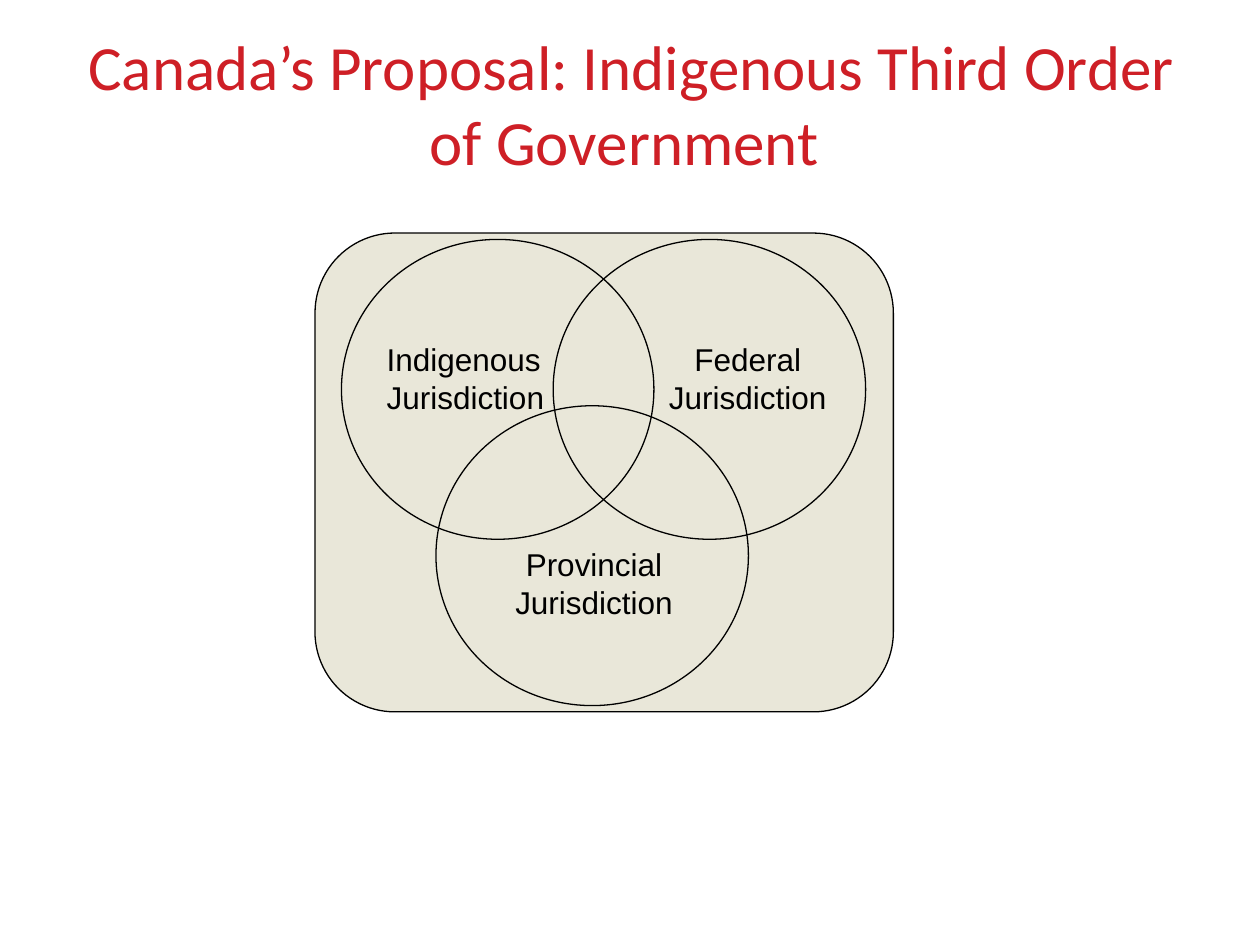
from lxml.etree import SubElement
from pptx import Presentation
from pptx.dml.color import RGBColor
from pptx.enum.shapes import MSO_SHAPE
from pptx.enum.text import MSO_ANCHOR, MSO_AUTO_SIZE, PP_ALIGN
from pptx.oxml.ns import qn
from pptx.util import Inches, Pt

RED = RGBColor(0xCE, 0x1F, 0x26)
TAN = RGBColor(0xC4, 0xBD, 0x97)
BLACK = RGBColor(0, 0, 0)

CIRCLE_WIDTH, CIRCLE_HEIGHT = 2.48, 2.38
LABEL_WIDTH, LABEL_HEIGHT = 1.53, 0.71

# Offsets from the panel's corner: circle (left, top), label (left, top)
JURISDICTIONS = [
    ("Indigenous Jurisdiction", (0.21, 0.05), (0.47, 0.8), PP_ALIGN.LEFT),
    ("Federal Jurisdiction", (1.89, 0.05), (2.67, 0.8), PP_ALIGN.CENTER),
    ("Provincial Jurisdiction", (0.96, 1.37), (1.45, 2.43), PP_ALIGN.CENTER),
]


def format_text(text_frame, font_name, size, color, alignment):
    paragraph = text_frame.paragraphs[0]
    paragraph.alignment = alignment
    font = paragraph.runs[0].font
    font.name, font.size = font_name, Pt(size)
    font.color.rgb = color


def add_outlined_shape(shapes, kind, left, top, width, height):
    shape = shapes.add_shape(kind, Inches(left), Inches(top), Inches(width), Inches(height))
    shape.shadow.inherit = False
    shape.fill.background()
    shape.line.color.rgb = BLACK
    shape.line.width = Pt(0.75)
    return shape


def add_title(slide, left, top, width, height):
    title = slide.shapes.title
    title.left, title.top = Inches(left), Inches(top)
    title.width, title.height = Inches(width), Inches(height)
    text_frame = title.text_frame
    text_frame.text = "Canada’s Proposal: Indigenous Third Order of Government "
    text_frame.word_wrap = True
    text_frame.auto_size = MSO_AUTO_SIZE.NONE
    text_frame.vertical_anchor = MSO_ANCHOR.MIDDLE
    format_text(text_frame, "Calibri", 36, RED, PP_ALIGN.CENTER)


def add_panel(slide, left, top, width, height):
    panel = add_outlined_shape(
        slide.shapes, MSO_SHAPE.ROUNDED_RECTANGLE, left, top, width, height)
    panel.adjustments[0] = 0.167
    panel.fill.solid()
    panel.fill.fore_color.rgb = TAN
    fill_color = panel.fill._xPr.find(qn("a:solidFill")).find(qn("a:srgbClr"))
    SubElement(fill_color, qn("a:alpha"), val="36000")


def add_label(shapes, text, left, top, alignment):
    label = shapes.add_textbox(
        Inches(left), Inches(top), Inches(LABEL_WIDTH), Inches(LABEL_HEIGHT))
    text_frame = label.text_frame
    text_frame.text = text
    text_frame.word_wrap = True
    text_frame.auto_size = MSO_AUTO_SIZE.SHAPE_TO_FIT_TEXT
    format_text(text_frame, "Arial", 18, BLACK, alignment)


def add_venn_diagram(slide, left, top, width, height):
    add_panel(slide, left, top, width, height)
    shapes = slide.shapes.add_group_shape().shapes
    for text, (circle_x, circle_y), (label_x, label_y), alignment in JURISDICTIONS:
        add_outlined_shape(shapes, MSO_SHAPE.OVAL, left + circle_x, top + circle_y,
                           CIRCLE_WIDTH, CIRCLE_HEIGHT)
        add_label(shapes, text, left + label_x, top + label_y, alignment)


def main():
    presentation = Presentation()
    presentation.slide_width, presentation.slide_height = Inches(10), Inches(7.5)
    slide = presentation.slides.add_slide(presentation.slide_layouts[5])
    add_title(slide, 0.51, 0.19, 9, 1.25)
    add_venn_diagram(slide, 2.5, 1.85, 4.59, 3.8)
    presentation.save("out.pptx")


if __name__ == "__main__":
    main()
